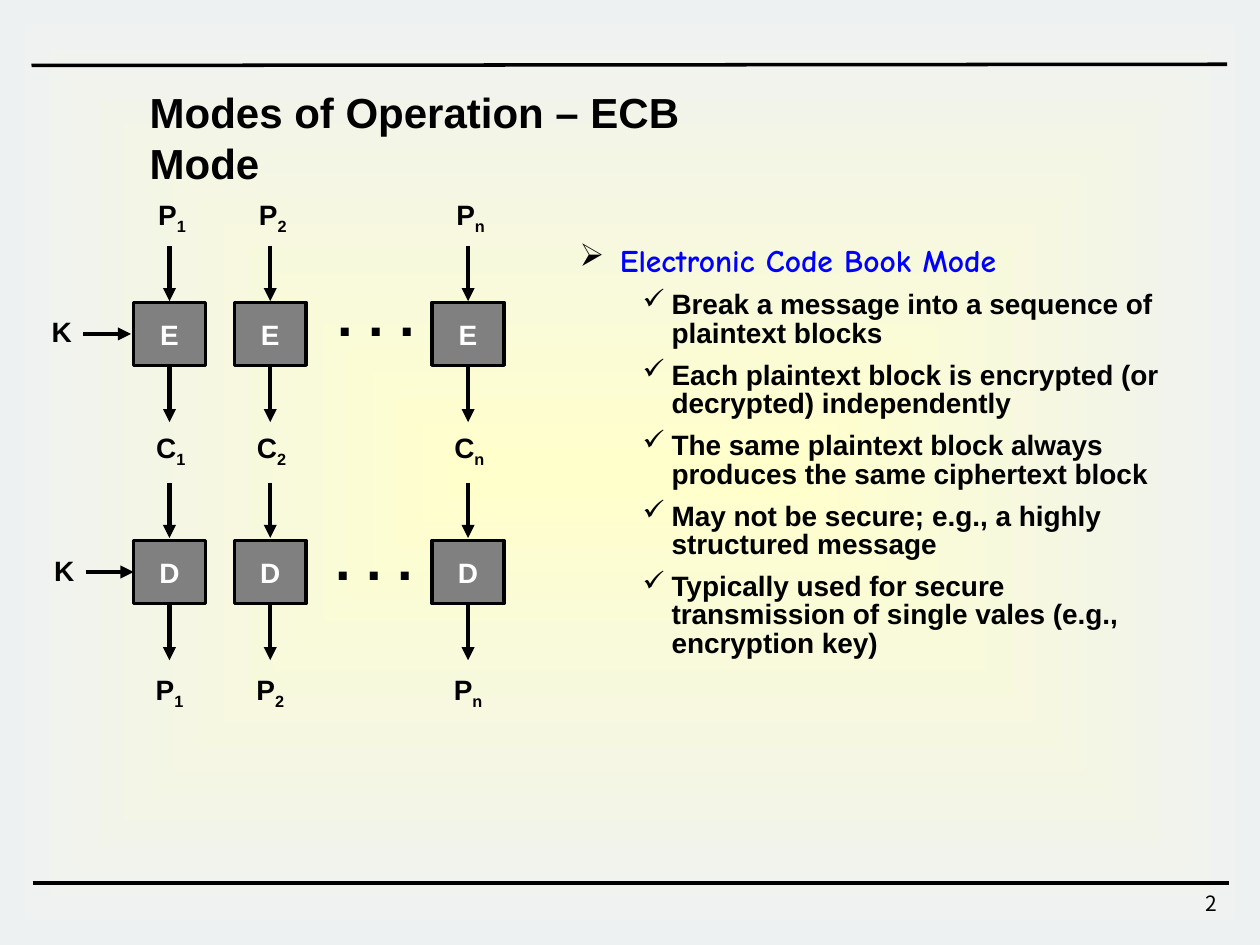
from dataclasses import dataclass

from lxml import etree
from pptx import Presentation
from pptx import util as u
from pptx.dml.color import RGBColor
from pptx.enum import shapes, text
from pptx.oxml import ns

TITLE = "Modes of Operation – ECB Mode"
PAGE_NUMBER = "2"
HEADING = "Electronic Code Book Mode"
POINTS = [
    "Break a message into a sequence of plaintext blocks",
    "Each plaintext block is encrypted (or decrypted) independently",
    "The same plaintext block always produces the same ciphertext block",
    "May not be secure; e.g., a highly structured message",
    "Typically used for secure transmission of single vales (e.g., encryption key)",
]
KEY, DOTS = "K", ". . ."

GRID_COLUMNS, GRID_ROWS = 100, 75
BLOCKS = {"1": 13.45, "2": 21.45, "n": 37.15}
LABELS = [("P", 15.7, 0.2), ("C", 34.2, 0.1), ("P", 53.4, 0)]
STAGES = [("E", 24, 4.1, 26.8, 22.3), ("D", 42.9, 4.3, 26.6, 41.6)]
ARROW_ROWS = [19.5, 29.1, 38.3, 48]
ARROW_LENGTH = 4.4
BOX_WIDTH, BOX_HEIGHT = 5.7, 5
RULES = [(2.5, 5.2, 97.4, 5.1), (2.6, 70.1, 97.5, 70.1)]


@dataclass(frozen=True)
class Theme:
    ink: str = "000000"
    accent: str = "0000FF"
    light: str = "FFFFFF"
    box: str = "808080"
    glow: str = "FFFFCC"
    edge: str = "EEF1F2"
    sans: str = "Arial"
    comic: str = "Comic Neue"
    number_font: str = "Noto Sans CJK KR"
    title: int = 24
    heading: int = 18
    body: int = 16
    dots: int = 32
    number: int = 12
    thin: float = 2
    thick: float = 2.5


THEME = Theme()
deck = Presentation()
deck.slide_width, deck.slide_height = u.Inches(10), u.Inches(7.5)
page = deck.slides.add_slide(deck.slide_layouts[6])


def across(columns):
    return round(deck.slide_width * columns / GRID_COLUMNS)


def down(rows):
    return round(deck.slide_height * rows / GRID_ROWS)


def place(left, top, width, height):
    return across(left), down(top), across(width), down(height)


def color(value):
    return RGBColor.from_string(value)


def style(para, size, ink=THEME.ink, name=THEME.sans, bold=True):
    font = para.font
    font.size, font.name, font.bold = u.Pt(size), name, bold
    font.color.rgb = color(ink)


def add_text(content, area, size, subscript="", align=text.PP_ALIGN.CENTER,
             inset=False, wrap=False, **look):
    box = page.shapes.add_textbox(*place(*area))
    frame = box.text_frame
    frame.word_wrap = wrap
    if not inset:
        frame.margin_left = frame.margin_right = 0
        frame.margin_top = frame.margin_bottom = 0
    para = frame.paragraphs[0]
    para.alignment = align
    para.add_run().text = content
    if subscript:
        span = para.add_run()
        span.text = subscript
        span.font._element.set("baseline", "-25000")
    style(para, size, **look)


def add_line(x1, y1, x2, y2, width, arrow=False):
    line = page.shapes.add_connector(
        shapes.MSO_CONNECTOR.STRAIGHT, across(x1), down(y1), across(x2), down(y2))
    line.line.color.rgb = color(THEME.ink)
    line.line.width = u.Pt(width)
    if arrow:
        outline = line.line._get_or_add_ln()
        etree.SubElement(outline, ns.qn("a:tailEnd"), type="triangle")
    etree.SubElement(line._element.spPr, ns.qn("a:effectLst"))


def add_rectangle(area):
    box = page.shapes.add_shape(shapes.MSO_SHAPE.RECTANGLE, *place(*area))
    box.shadow.inherit = False
    return box


def add_backdrop():
    box = add_rectangle((0, 0, GRID_COLUMNS, GRID_ROWS))
    box.line.fill.background()
    box.fill.gradient()
    for stop, tint, position in zip(
            box.fill.gradient_stops, (THEME.glow, THEME.edge), (0, 1)):
        stop.color.rgb = color(tint)
        stop.position = position
    gradient = box._element.spPr.find(ns.qn("a:gradFill"))
    gradient.remove(gradient.find(ns.qn("a:lin")))
    shade = etree.SubElement(gradient, ns.qn("a:path"))
    shade.set("path", "shape")
    etree.SubElement(shade, ns.qn("a:fillToRect"),
                     {side: "50000" for side in "ltrb"})


def add_block(letter, center, top):
    box = add_rectangle((center - BOX_WIDTH / 2, top, BOX_WIDTH, BOX_HEIGHT))
    box.fill.solid()
    box.fill.fore_color.rgb = color(THEME.box)
    box.line.color.rgb = color(THEME.ink)
    box.line.width = u.Pt(THEME.thin)
    frame = box.text_frame
    frame.vertical_anchor = text.MSO_ANCHOR.MIDDLE
    para = frame.paragraphs[0]
    para.text = letter
    para.alignment = text.PP_ALIGN.CENTER
    style(para, THEME.body, THEME.light)


def set_bullet(para, mark, margin, hanging):
    properties = para._p.get_or_add_pPr()
    properties.set("marL", str(across(margin)))
    properties.set("indent", str(-across(hanging)))
    tint = etree.SubElement(properties, ns.qn("a:buClr"))
    etree.SubElement(tint, ns.qn("a:srgbClr"), val=THEME.ink)
    etree.SubElement(properties, ns.qn("a:buChar"), char=mark)


def add_points():
    box = page.shapes.add_textbox(*place(46, 19.1, 46.4, 36.6))
    frame = box.text_frame
    frame.word_wrap = True
    frame.margin_left = frame.margin_right = 0
    frame.margin_top = frame.margin_bottom = 0
    para = frame.paragraphs[0]
    para.text = HEADING
    set_bullet(para, "➢", 3.2, 3.2)
    style(para, THEME.heading, THEME.accent, THEME.comic)
    for point in POINTS:
        para = frame.add_paragraph()
        para.text = point
        para.level = 1
        para.line_spacing = 0.84
        para.space_before = u.Pt(THEME.body / 2)
        set_bullet(para, "✓", 7.3, 2.3)
        style(para, THEME.body)


add_backdrop()
for rule in RULES:
    add_line(*rule, THEME.thin)
add_text(PAGE_NUMBER, (76.8, 70.2, 20.8, 3.3), THEME.number, inset=True, wrap=True,
         align=text.PP_ALIGN.RIGHT, name=THEME.number_font, bold=False)
add_text(TITLE, (10.9, 6.4, 53.6, 5), THEME.title, inset=True,
         align=text.PP_ALIGN.LEFT)
add_points()

for index, center in BLOCKS.items():
    for letter, top, shift in LABELS:
        add_text(letter, (center + shift - 1.2, top, 2.4, 2.7), THEME.body, index)
    for letter, top, *_ in STAGES:
        add_block(letter, center, top)
    for top in ARROW_ROWS:
        add_line(center, top, center, top + ARROW_LENGTH, THEME.thick, arrow=True)

for number, (letter, top, key_left, dots_left, dots_top) in enumerate(STAGES):
    middle = top + BOX_HEIGHT / 2
    add_text(KEY, (key_left, middle - 1.5, 1.6, 2.7), THEME.body)
    add_line(key_left + 2.5, middle, key_left + 6.3, middle, THEME.thick, arrow=True)
    add_text(DOTS, (dots_left, dots_top, 6.2, 5.3), THEME.dots, wrap=True)

deck.save("out.pptx")
